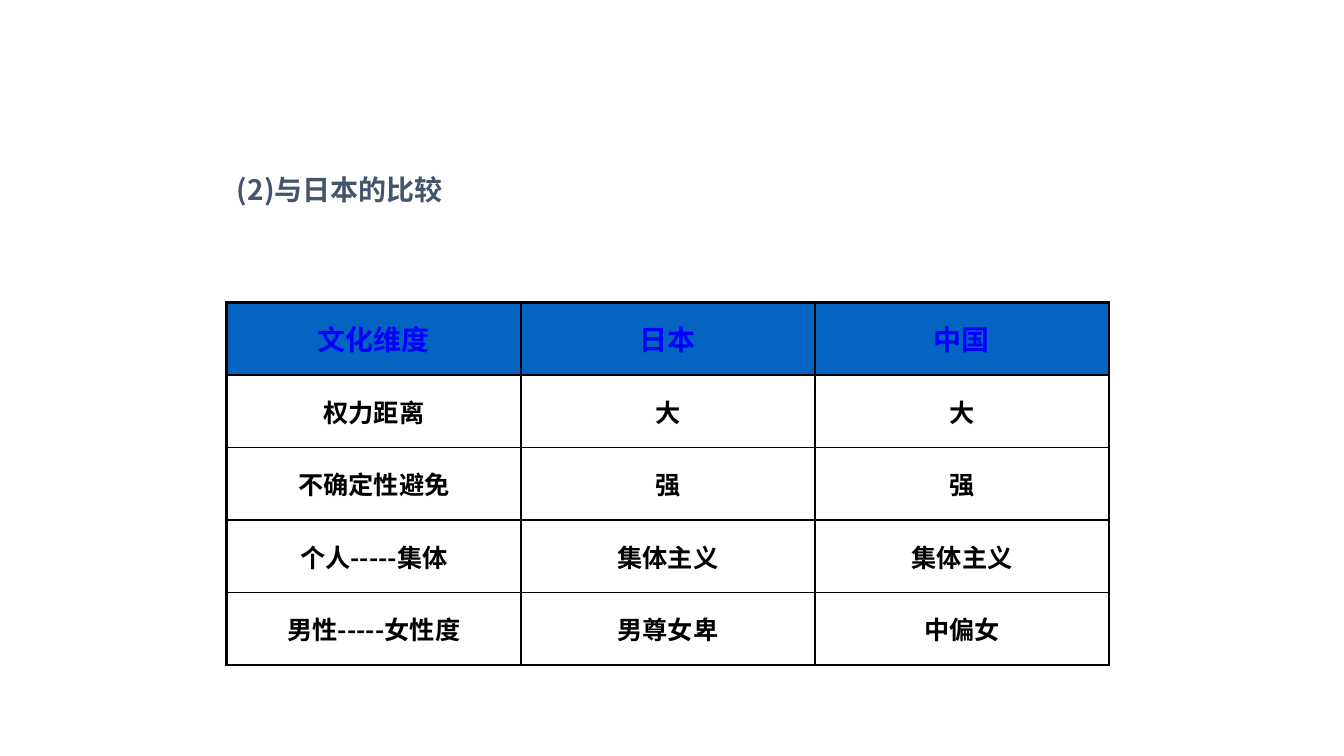
from lxml.etree import SubElement
from pptx import Presentation
from pptx.dml.color import RGBColor
from pptx.enum.text import MSO_ANCHOR, PP_ALIGN
from pptx.oxml.ns import qn
from pptx.util import Inches, Pt

WIDE, HIGH = Inches(13.33), Inches(7.5)
INK = {"title": "44546A", "head": "0000FF", "body": "000000",
       "band": "0563C1", "page": "FFFFFF", "line": "000000"}
HAN = "Noto Sans CJK SC"
THICK, THIN = 2.25, 1

ROWS = [
    ("文化维度", "日本", "中国"),
    ("权力距离", "大", "大"),
    ("不确定性避免", "强", "强"),
    ("个人-----集体", "集体主义", "集体主义"),
    ("男性-----女性度", "男尊女卑", "中偏女"),
]


def style(para, size, ink, face=HAN):
    """Format every run of a paragraph."""
    for run in para.runs:
        font = run.font
        font.size, font.bold, font.name = Pt(size), True, face
        font.color.rgb = RGBColor.from_string(INK[ink])
        SubElement(font._element, qn("a:ea"), typeface=HAN)


def edge(cell, side, width):
    """Draw one border of a cell."""
    props = cell._tc.get_or_add_tcPr()
    line = SubElement(props, qn(f"a:ln{side}"), w=str(Pt(width)))
    fill = SubElement(line, qn("a:solidFill"))
    SubElement(fill, qn("a:srgbClr"), val=INK["line"])


def title(slide, text, left, top, width, height):
    box = slide.shapes.add_textbox(left, top, width, height)
    frame = box.text_frame
    frame.word_wrap = True
    frame.margin_left = Inches(0.43)
    frame.text = text
    para = frame.paragraphs[0]
    para.line_spacing, para.space_before = 0.9, Pt(10)
    style(para, 20, "title")


def fill_cell(cell, text, head):
    size = 20 if head else 18
    cell.text = text
    cell.vertical_anchor = MSO_ANCHOR.MIDDLE
    cell.fill.solid()
    cell.fill.fore_color.rgb = RGBColor.from_string(INK["band" if head else "page"])
    para = cell.text_frame.paragraphs[0]
    para.alignment = PP_ALIGN.CENTER
    para.space_before = Pt(size * 0.2)
    style(para, size, "head" if head else "body", "Arial" if head else HAN)


def grid(slide, rows, left, top, width, height):
    """Build the table with a thick frame and thin inner lines."""
    last, end = len(rows) - 1, len(rows[0]) - 1
    table = slide.shapes.add_table(last + 1, end + 1, left, top, width, height).table
    for r, row in enumerate(rows):
        for c, text in enumerate(row):
            cell = table.cell(r, c)
            outer = {"L": c == 0, "R": c == end, "T": r == 0, "B": r == last}
            for side, rim in outer.items():
                edge(cell, side, THICK if rim else THIN)
            fill_cell(cell, text, r == 0)


def main():
    deck = Presentation()
    deck.slide_width, deck.slide_height = WIDE, HIGH
    slide = deck.slides.add_slide(deck.slide_layouts[6])

    # Heading
    title(slide, "(2)与日本的比较",
          Inches(1.92), Inches(1.7), Inches(9.54), Inches(5.55))

    # Comparison table
    grid(slide, ROWS, Inches(2.25), HIGH * 2 // 5, Inches(8.75), HIGH * 12 // 25)

    deck.save("out.pptx")


if __name__ == "__main__":
    main()
